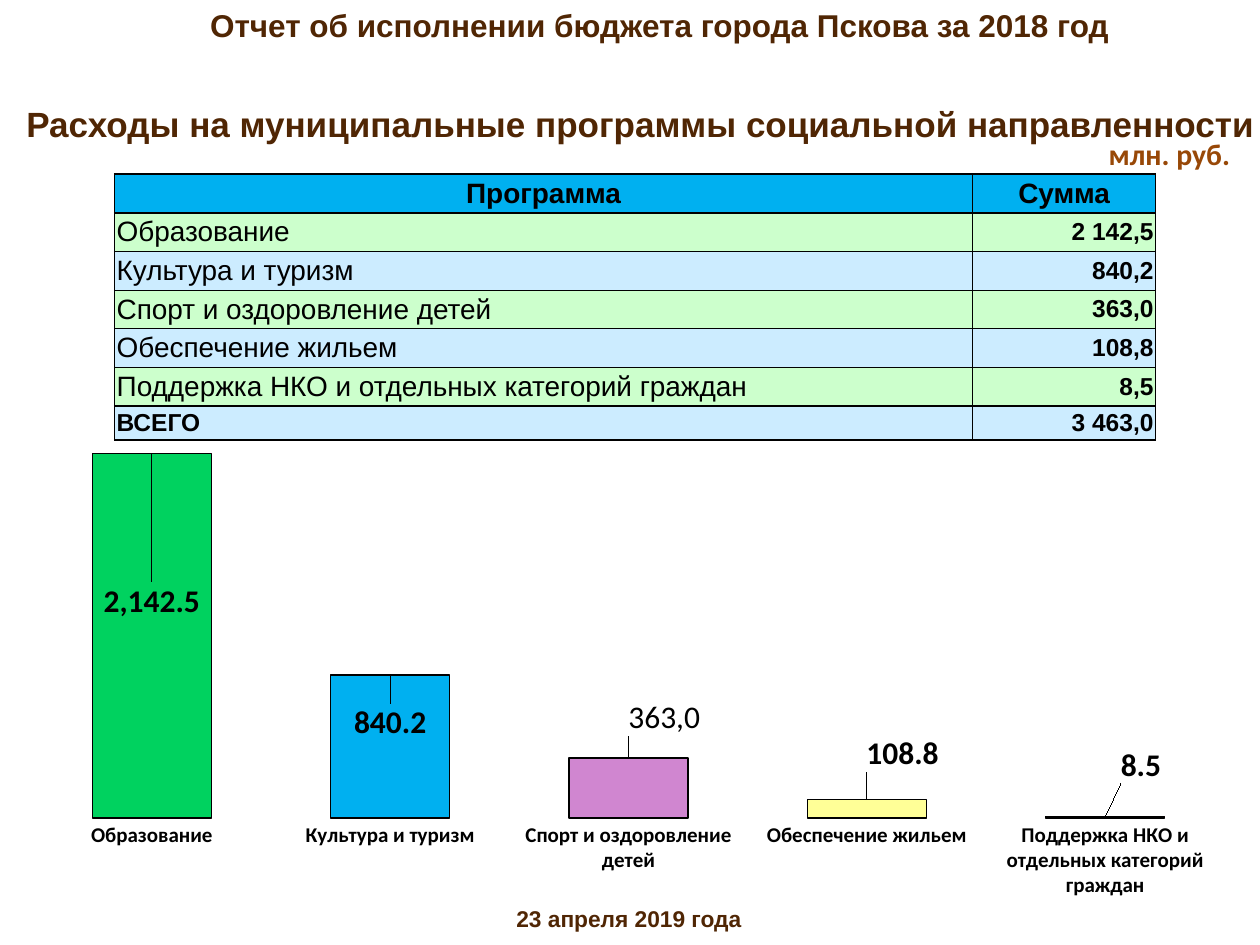
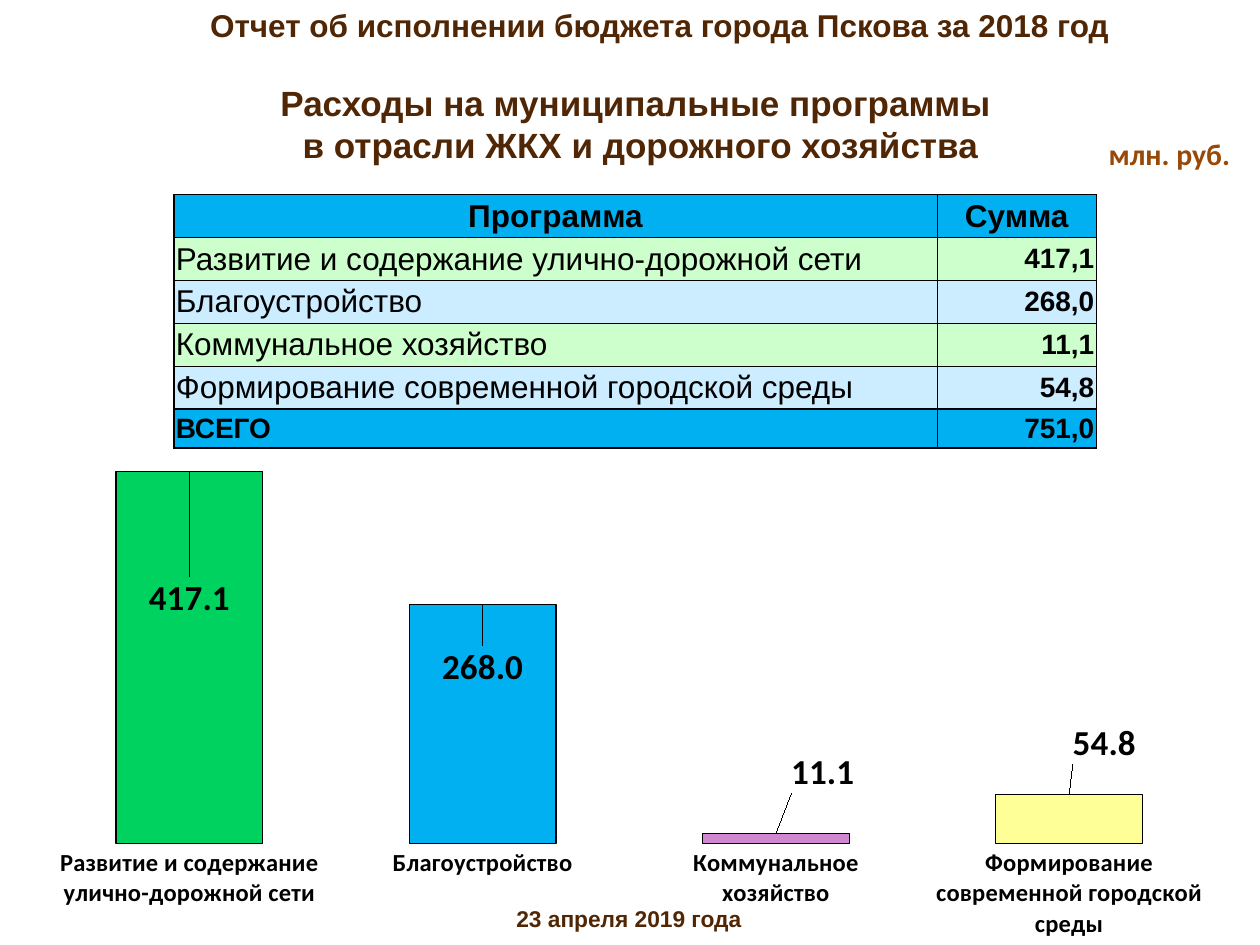
from pptx import Presentation
from pptx.chart.data import CategoryChartData
from pptx.dml.color import RGBColor
from pptx.enum.chart import XL_CHART_TYPE, XL_LABEL_POSITION, XL_TICK_MARK
from pptx.enum.text import MSO_ANCHOR, MSO_AUTO_SIZE, PP_ALIGN
from pptx.oxml import parse_xml
from pptx.oxml.ns import nsdecls
from pptx.util import Pt

LEFT, CENTER, RIGHT = PP_ALIGN.LEFT, PP_ALIGN.CENTER, PP_ALIGN.RIGHT
TOP, MIDDLE = MSO_ANCHOR.TOP, MSO_ANCHOR.MIDDLE
COLUMNS = XL_CHART_TYPE.COLUMN_CLUSTERED
OUTSIDE, NO_TICKS = XL_LABEL_POSITION.OUTSIDE_END, XL_TICK_MARK.NONE
GROW = MSO_AUTO_SIZE.SHAPE_TO_FIT_TEXT

# Shared content and look
BROWN, RUST, BLACK = "502604", "984807", "000000"
BLUE, GREEN_ROW, BLUE_ROW = "00B0F0", "CCFFCC", "CCECFF"
BAR_COLORS = ["00D25F", BLUE, "D086D0", "FFFF97", "F65C4C"]
NUMBER_FORMAT = "#,##0.0"
HEADER = "Отчет об исполнении бюджета города Пскова за 2018 год"
FOOTER = "23 апреля 2019 года"
UNIT = "млн. руб."
TABLE_HEAD = ("Программа", "Сумма")

# Boxes are left, top, width, height; label shifts are shares of the chart size
SLIDES = [
    {
        "title": "Расходы на муниципальные программы социальной направленности",
        "title_box": (5, 54.7, 722, 31.7),
        "rows": [
            ("Образование", "2 142,5"),
            ("Культура и туризм", "840,2"),
            ("Спорт и оздоровление детей", "363,0"),
            ("Обеспечение жильем", "108,8"),
            ("Поддержка НКО и отдельных категорий граждан", "8,5"),
        ],
        "total": ("ВСЕГО", "3 463,0"),
        "total_fill": BLUE_ROW,
        "table_at": (65.5, 99.5),
        "columns": (490.3, 104.6),
        "row_heights": (22.1, 19.5),
        "name_size": 16,
        "chart_box": (18.7, 224.6, 681, 315.4),
        "plot_height": 0.77,
        "axis_maximum": 2500,
        "values": [2142.5, 840.2, 353, 108.8, 8.5],
        "label_shifts": [(0, 0.31), (0, 0.13), (0.03, -0.03), (0.03, -0.04), (0.03, -0.05)],
        "label_texts": {2: "363,0"},
        "label_size": 18,
        "category_size": 12,
    },
    {
        "title": "Расходы на муниципальные программы \vв отрасли ЖКХ и дорожного хозяйства",
        "title_box": (151, 43.2, 430, 55.4),
        "rows": [
            ("Развитие и содержание улично-дорожной сети", "417,1"),
            ("Благоустройство", "268,0"),
            ("Коммунальное хозяйство", "11,1"),
            ("Формирование современной городской среды", "54,8"),
        ],
        "total": ("ВСЕГО", "751,0"),
        "total_fill": BLUE,
        "table_at": (99.3, 111.3),
        "columns": (436.3, 90.9),
        "row_heights": (24.5, 22.3),
        "name_size": 18,
        "chart_box": (24.5, 252.7, 670.3, 283.7),
        "plot_height": 0.81,
        "axis_maximum": 450,
        "values": [417.1, 268, 11.1, 54.8],
        "label_shifts": [(0, 0.31), (0, 0.18), (0.04, -0.07), (0.03, -0.05)],
        "label_texts": {},
        "label_size": 20,
        "category_size": 14,
    },
]


def rgb(color):
    return RGBColor.from_string(color)


def set_font(font, color=BLACK, **values):
    for name, value in values.items():
        setattr(font, name, value)
    font.color.rgb = rgb(color)


def place(shape, box):
    for name, value in zip(("left", "top", "width", "height"), box):
        setattr(shape, name, Pt(value))


def write(shape, text, size, color=BROWN, align=LEFT, font_name="Arial", wrap=True):
    frame = shape.text_frame
    settings = {"word_wrap": wrap, "auto_size": GROW, "vertical_anchor": TOP}
    for name, value in settings.items():
        setattr(frame, name, value)
    paragraph = frame.paragraphs[0]
    paragraph.text = text
    paragraph.alignment = align
    set_font(paragraph.font, color, size=Pt(size), name=font_name, bold=True)
    return paragraph


def add_text(slide, box, *args, **options):
    shape = slide.shapes.add_textbox(*map(Pt, box))
    return write(shape, *args, **options)


def add_frame(slide, content):
    """Title, running header, date and unit."""
    title = slide.shapes.title
    place(title, content["title_box"])
    write(title, content["title"], 20, align=CENTER, wrap=False)
    header = add_text(slide, (0, 0, 720, 29), HEADER, 18)
    header._p.get_or_add_pPr().set("marL", str(Pt(113)))
    add_text(slide, (-0.7, 513.4, 720, 23), FOOTER, 13, align=CENTER)
    add_text(slide, (626.4, 74.2, 84.2, 28), UNIT, 17, RUST, font_name="Calibri", wrap=False)


def set_borders(cell, top, bottom):
    properties = cell._tc.get_or_add_tcPr()
    for index, (side, width) in enumerate((("L", 1), ("R", 1), ("T", top), ("B", bottom))):
        line = parse_xml(
            f'<a:ln{side} {nsdecls("a")} w="{Pt(width)}"><a:solidFill>'
            f'<a:srgbClr val="{BLACK}"/></a:solidFill></a:ln{side}>')
        properties.insert(index, line)


def add_table(slide, content):
    rows = [TABLE_HEAD, *content["rows"], content["total"]]
    last = len(rows) - 1
    body_height, total_height = content["row_heights"]
    heights = [body_height] * last + [total_height]
    box = (*content["table_at"], sum(content["columns"]), sum(heights))
    table = slide.shapes.add_table(len(rows), 2, *map(Pt, box)).table
    table.first_row = table.horz_banding = False
    for column, width in zip(table.columns, content["columns"]):
        column.width = Pt(width)

    for row_index, row in enumerate(rows):
        table.rows[row_index].height = Pt(heights[row_index])
        is_head, is_total = row_index == 0, row_index == last
        fill = (BLUE if is_head else content["total_fill"] if is_total
                else GREEN_ROW if row_index % 2 else BLUE_ROW)
        # Body rows are parted by thin rules
        top = 0.5 if 1 < row_index < last else 1
        bottom = 0.5 if 0 < row_index < last - 1 else 1
        for column_index, text in enumerate(row):
            cell = table.cell(row_index, column_index)
            is_name = column_index == 0
            cell.fill.solid()
            cell.fill.fore_color.rgb = rgb(fill)
            cell.vertical_anchor = MIDDLE
            for side in ("left", "right", "top", "bottom"):
                setattr(cell, f"margin_{side}", Pt(1.2))
            set_borders(cell, top, bottom)
            paragraph = cell.text_frame.paragraphs[0]
            paragraph.text = text
            paragraph.alignment = CENTER if is_head else LEFT if is_name else RIGHT
            large = is_head or (is_name and not is_total)
            set_font(paragraph.font, name="Arial",
                     size=Pt(content["name_size"] - (0 if large else 2)),
                     bold=is_head or is_total or not is_name)


def manual_layout(*parts):
    items = "".join(f'<c:{tag} val="{value}"/>' for tag, value in parts)
    return parse_xml(f'<c:layout {nsdecls("c")}><c:manualLayout>{items}'
                     '</c:manualLayout></c:layout>')


def add_labels(chart, series, content):
    size = Pt(content["label_size"])
    labels = series.data_labels
    labels.show_value = True
    labels.number_format, labels.number_format_is_linked = NUMBER_FORMAT, False
    labels.position = OUTSIDE
    set_font(labels.font, size=size, bold=True)
    for index in range(len(content["values"])):
        label = series.points[index].data_label
        text = content["label_texts"].get(index)
        if text:
            paragraph = label.text_frame.paragraphs[0]
            paragraph.text = text
            set_font(paragraph.runs[0].font, size=size, bold=False)
        else:
            set_font(label.font, size=size, bold=True)
        label.position = OUTSIDE

    # Shift each label from the top of its bar
    elements = chart._chartSpace.xpath(".//c:dLbl")
    for index, (element, (x, y)) in enumerate(zip(elements, content["label_shifts"])):
        element.insert(1, manual_layout(("x", x), ("y", y)))
        if index not in content["label_texts"]:
            element.insert(2, parse_xml(
                f'<c:numFmt {nsdecls("c")} formatCode="{NUMBER_FORMAT}" sourceLinked="0"/>'))


def add_chart(slide, content):
    data = CategoryChartData(number_format=NUMBER_FORMAT)
    data.categories = [name for name, amount in content["rows"]]
    data.add_series("Series 1", content["values"])
    chart = slide.shapes.add_chart(COLUMNS, *map(Pt, content["chart_box"]), data).chart
    chart.has_title = chart.has_legend = False
    set_font(chart.font, name="Calibri", size=Pt(10))

    # Axes
    value_axis, category_axis = chart.value_axis, chart.category_axis
    axis_values = {"visible": False, "has_major_gridlines": False,
                   "minimum_scale": 0, "maximum_scale": content["axis_maximum"]}
    for name, value in axis_values.items():
        setattr(value_axis, name, value)
    category_axis.major_tick_mark = category_axis.minor_tick_mark = NO_TICKS
    category_axis.format.line.fill.background()
    set_font(category_axis.tick_labels.font, size=Pt(content["category_size"]), bold=True)

    # Bars
    plot = chart.plots[0]
    plot.gap_width = 100
    plot.vary_by_categories = False
    series = plot.series[0]
    series.invert_if_negative = False
    for index in range(len(content["values"])):
        bar = series.points[index].format
        bar.fill.solid()
        bar.fill.fore_color.rgb = rgb(BAR_COLORS[index])
        bar.line.color.rgb = rgb(BLACK)
        bar.line.width = Pt(0.75)
    add_labels(chart, series, content)

    # Plot area
    area = chart._chartSpace.xpath(".//c:plotArea")[0]
    for layout in area.xpath("./c:layout"):
        area.remove(layout)
    area.insert(0, manual_layout(
        ("layoutTarget", "inner"), ("xMode", "edge"), ("yMode", "edge"),
        ("x", 0), ("y", 0), ("w", 1), ("h", content["plot_height"])))


def main():
    presentation = Presentation()
    presentation.slide_width, presentation.slide_height = Pt(720), Pt(540)
    title_only = presentation.slide_layouts[5]
    for content in SLIDES:
        slide = presentation.slides.add_slide(title_only)
        add_frame(slide, content)
        add_table(slide, content)
        add_chart(slide, content)
    presentation.save("out.pptx")


if __name__ == "__main__":
    main()
